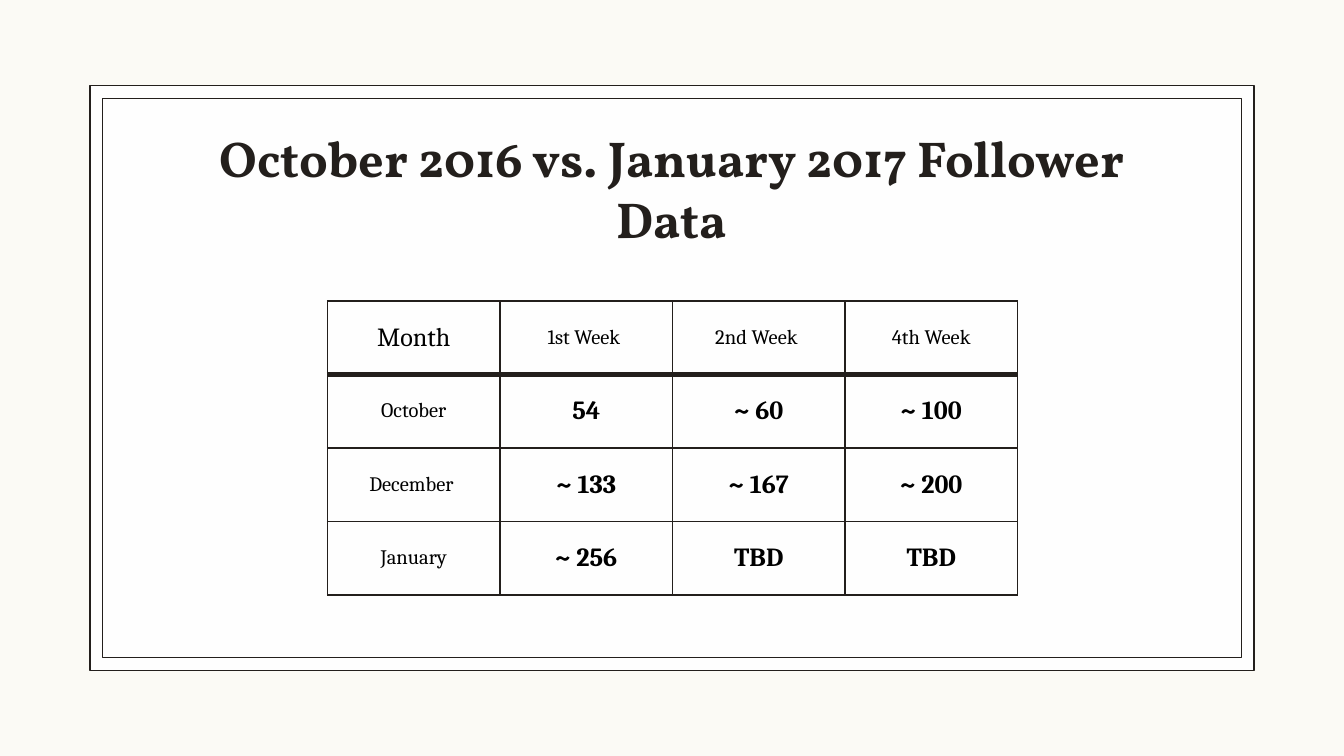
from lxml import etree
from pptx import Presentation
from pptx.dml.color import RGBColor
from pptx.enum import shapes, text
from pptx.oxml import ns
from pptx.util import Cm, Pt

INK = RGBColor(0x23, 0x1F, 0x1C)
BLACK = RGBColor(0, 0, 0)
WHITE = RGBColor(255, 255, 255)
CREAM = RGBColor(0xFB, 0xFA, 0xF5)

FOLLOWERS = [
    ["Month", "1st Week ", "2nd Week ", "4th Week"],
    ["October", "54", "~ 60", "~ 100"],
    ["December ", "~ 133", "~ 167", "~ 200"],
    ["January", "~ 256", "TBD", "TBD"],
]


class FollowerSlide:
    """Holds the style and the current page, and draws each kind of element."""

    title_font = "Vollkorn"
    body_font = "Cambria"
    thin = 0.75
    thick = 3

    def __init__(self, deck):
        self.page = deck.slides.add_slide(deck.slide_layouts[5])
        self.page.background.fill.solid()
        self.page.background.fill.fore_color.rgb = CREAM

    def add_words(self, para, words, font, size, color, bold):
        para.alignment = text.PP_ALIGN.CENTER
        span = para.add_run()
        span.text = words
        span.font.name = font
        span.font.size = Pt(size)
        span.font.color.rgb = color
        span.font.bold = bold

    def veil(self, fill, properties):
        fill.solid()
        fill.fore_color.rgb = WHITE
        color = properties.find(ns.qn("a:solidFill"))[0]
        etree.SubElement(color, ns.qn("a:alpha"), val="93000")

    def frame(self, left, top, width, height, filled):
        box = self.page.shapes.add_shape(
            shapes.MSO_SHAPE.RECTANGLE, Cm(left), Cm(top), Cm(width), Cm(height))
        box.shadow.inherit = False
        box.line.color.rgb = INK
        box.line.width = Pt(self.thin)
        if filled:
            self.veil(box.fill, box.element.spPr)
        else:
            box.fill.background()

    def title(self, words, left, top, width, height):
        box = self.page.shapes.title
        box.left, box.top, box.width, box.height = map(Cm, (left, top, width, height))
        box.element.getparent().append(box.element)
        frame = box.text_frame
        frame.word_wrap = True
        frame.auto_size = text.MSO_AUTO_SIZE.NONE
        frame.vertical_anchor = text.MSO_ANCHOR.BOTTOM
        frame.margin_left = frame.margin_right = Cm(0.25)
        frame.margin_top = frame.margin_bottom = Cm(0.25)
        self.add_words(frame.paragraphs[0], words, self.title_font, 27, INK, True)

    def borders(self, cell, top, bottom):
        properties = cell._tc.get_or_add_tcPr()
        sides = {"L": self.thin, "R": self.thin, "T": top, "B": bottom}
        for place, (side, width) in enumerate(sides.items()):
            line = etree.Element(ns.qn(f"a:ln{side}"), w=str(Pt(width)))
            fill = etree.SubElement(line, ns.qn("a:solidFill"))
            etree.SubElement(fill, ns.qn("a:srgbClr"), val=str(INK))
            properties.insert(place, line)

    def table(self, rows, left, top, column_width, row_height):
        table = self.page.shapes.add_table(
            len(rows), len(rows[0]), Cm(left), Cm(top),
            Cm(column_width * len(rows[0])), Cm(row_height * len(rows))).table
        table.first_row = table.horz_banding = False
        for column in table.columns:
            column.width = Cm(column_width)
        for r, row in enumerate(rows):
            table.rows[r].height = Cm(row_height)
            for c, words in enumerate(row):
                cell = table.cell(r, c)
                is_value = r > 0 and c > 0
                size = 14 if is_value or r == c == 0 else 11
                cell.vertical_anchor = text.MSO_ANCHOR.MIDDLE
                cell.margin_left = cell.margin_right = Cm(0.25)
                cell.margin_top = cell.margin_bottom = Cm(0.18)
                self.add_words(cell.text_frame.paragraphs[0], words,
                               self.body_font, size, BLACK, is_value)
                if is_value:
                    self.veil(cell.fill, cell._tc.get_or_add_tcPr())
                else:
                    cell.fill.background()
                self.borders(cell, self.thick if r == 1 else self.thin,
                             self.thick if r == 0 else self.thin)


def main():
    deck = Presentation()
    deck.slide_width, deck.slide_height = Cm(25.4), Cm(14.29)
    slide = FollowerSlide(deck)
    left, top, width, height, gap = 1.7, 1.62, 22, 11.05, 0.24
    slide.frame(left, top, width, height, True)
    slide.frame(left + gap, top + gap, width - 2 * gap, height - 2 * gap, False)
    slide.title("October 2016 vs. January 2017 Follower Data", 3.48, 2.49, 18.44, 2.46)
    slide.table(FOLLOWERS, 6.19, 5.69, 3.26, 1.39)
    deck.save("out.pptx")


if __name__ == "__main__":
    main()
